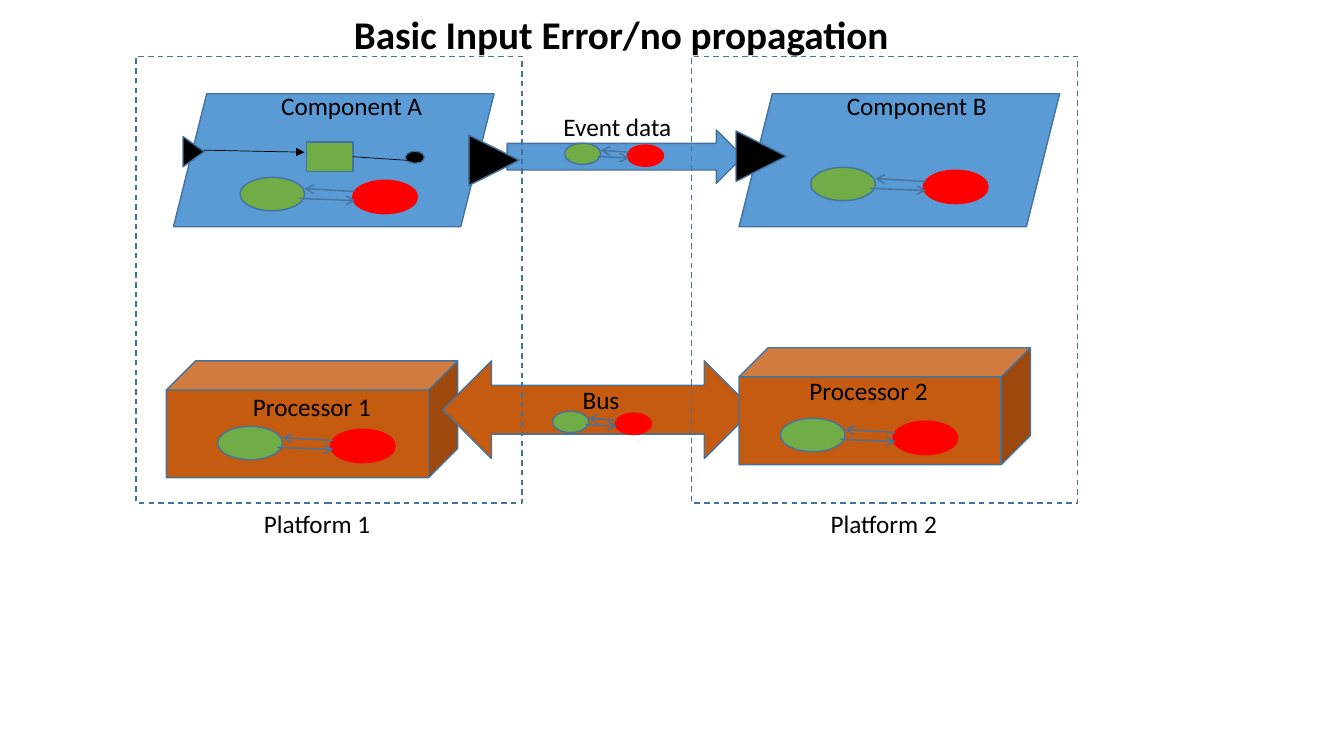
from typing import NamedTuple

from lxml import etree
from pptx import Presentation
from pptx.dml.color import RGBColor
from pptx.enum.dml import MSO_LINE_DASH_STYLE as Dash
from pptx.enum.shapes import MSO_CONNECTOR as Connector, MSO_SHAPE as Preset
from pptx.enum.text import MSO_ANCHOR as Anchor, MSO_AUTO_SIZE as AutoSize, PP_ALIGN as Align
from pptx.oxml.ns import qn
from pptx.util import Inches, Pt

BLACK, RED, GREEN = "000000", "FF0000", "70AD47"
BLUE, ORANGE, OUTLINE = "5B9BD5", "C55A11", "43739E"


class Box(NamedTuple):
    """A rectangle in inches."""
    left: float
    top: float
    width: float
    height: float

    def inner(self, dx, dy, width, height):
        """Return a box offset from this one's top left corner."""
        return Box(self.left + dx, self.top + dy, width, height)

    def point(self, x, y):
        """Return the point at the given fractions of the box."""
        return self.left + x * self.width, self.top + y * self.height

    def lengths(self):
        """Return the four values as lengths."""
        return [Inches(value) for value in self]


def color(value):
    """Turn a hex string into a colour."""
    return RGBColor.from_string(value)


def write(frame, text, size=18, bold=False, wrap=True):
    """Fill a text frame with one formatted, left-aligned line."""
    frame.word_wrap = wrap
    frame.auto_size = AutoSize.SHAPE_TO_FIT_TEXT
    frame.vertical_anchor = Anchor.TOP
    paragraph = frame.paragraphs[0]
    paragraph.alignment = Align.LEFT
    run = paragraph.add_run()
    run.text = text
    run.font.name = "Calibri"
    run.font.size = Pt(size)
    run.font.bold = bold
    run.font.color.rgb = color(BLACK)


def add_label(shapes, text, box, **text_format):
    """Add a text box."""
    write(shapes.add_textbox(*box.lengths()).text_frame, text, **text_format)


def add_preset(shapes, preset, box, fill=None, line=OUTLINE, rotation=0):
    """Add an outlined preset shape."""
    shape = shapes.add_shape(preset, *box.lengths())
    shape.shadow.inherit = False
    shape.rotation = rotation
    if fill:
        shape.fill.solid()
        shape.fill.fore_color.rgb = color(fill)
    else:
        shape.fill.background()
    shape.line.color.rgb = color(line)
    shape.line.width = Pt(1)
    return shape


def add_line(shapes, start, end, line=BLACK, width=0.5, head=None):
    """Add a straight line with an optional arrowhead at its end."""
    ends = [Inches(value) for value in (*start, *end)]
    connector = shapes.add_connector(Connector.STRAIGHT, *ends)
    connector.line.color.rgb = color(line)
    connector.line.width = Pt(width)
    properties = connector.element.spPr
    if head:
        etree.SubElement(properties.find(qn("a:ln")), qn("a:tailEnd"), type=head)
    etree.SubElement(properties, qn("a:effectLst"))
    return connector


def add_error_states(shapes, box):
    """Add the green and red states with the transitions between them."""
    group = shapes.add_group_shape().shapes
    width, height = 0.365 * box.width, 0.92 * box.height
    add_preset(group, Preset.OVAL,
               box.inner(box.width - width, box.height - height, width, height), RED, RED)
    add_preset(group, Preset.OVAL, box.inner(0, 0, width, height), GREEN)
    for start, end in (((0.65, 0.39), (0.365, 0.31)), ((0.335, 0.58), (0.65, 0.64))):
        add_line(group, box.point(*start), box.point(*end), OUTLINE, 1, "arrow")


def add_large_states(shapes, box, dx, dy):
    """Add the error states of a component or processor."""
    add_error_states(shapes, box.inner(dx, dy, 1.76, 0.36))


def add_small_states(shapes, box, dx, dy):
    """Add the error states of a link."""
    add_error_states(shapes, box.inner(dx, dy, 0.98, 0.23))


def add_platform(shapes, box, name, label_dx):
    """Add a dashed platform frame with its name below."""
    add_preset(shapes, Preset.RECTANGLE, box).line.dash_style = Dash.DASH
    add_label(shapes, name, box.inner(label_dx, box.height, 1.27, 0.4), wrap=False)


def add_component(shapes, box, name, states):
    """Add a software component."""
    add_preset(shapes, Preset.PARALLELOGRAM, box, BLUE)
    add_label(shapes, name, box.inner(0.97, -0.08, 1.62, 0.4), wrap=False)
    add_large_states(shapes, box, *states)


def add_input_flow(shapes, box):
    """Add the path from the input port to the error sink of a component."""
    source = add_preset(shapes, Preset.RECTANGLE, box.inner(1.32, 0.48, 0.46, 0.29), GREEN)
    add_preset(shapes, Preset.OVAL, box.inner(2.3, 0.57, 0.19, 0.12), BLACK)
    add_preset(shapes, Preset.ISOSCELES_TRIANGLE, box.inner(0.05, 0.47, 0.3, 0.21),
               BLACK, rotation=90)
    entry, middle, sink = [box.inner(dx, dy, 0, 0)[:2]
                           for dx, dy in ((0.3, 0.56), (1.78, 0.62), (2.46, 0.67))]
    add_line(shapes, sink, middle).end_connect(source, 3)
    add_line(shapes, entry, box.inner(1.3, 0.58, 0, 0)[:2], head="triangle")


def add_event_link(shapes, box):
    """Add the event connection between the two component ports."""
    add_preset(shapes, Preset.RIGHT_ARROW, box, BLUE)
    for dx, dy in ((-0.38, 0.05), (2.27, 0.01)):
        add_preset(shapes, Preset.ISOSCELES_TRIANGLE, box.inner(dx, dy, 0.5, 0.5),
                   BLACK, rotation=90)
    add_label(shapes, "Event data", box.inner(0.46, -0.23, 1.38, 0.4))
    add_small_states(shapes, box, 0.57, 0.13)


def add_processor(shapes, box, name, label, states):
    """Add a processor block."""
    add_preset(shapes, Preset.CUBE, box, ORANGE)
    add_label(shapes, name, box.inner(*label, 1.98, 0.4))
    add_large_states(shapes, box, *states)


def add_bus(shapes, box):
    """Add the bus between the processors."""
    add_preset(shapes, Preset.LEFT_RIGHT_ARROW, box, ORANGE)
    add_label(shapes, "Bus", box.inner(1.29, 0.18, 0.67, 0.4))
    add_small_states(shapes, box, 1.09, 0.5)


def add_title(slide, box):
    """Place and fill the title."""
    title = slide.shapes.title
    title.left, title.top, title.width, title.height = box.lengths()
    write(title.text_frame, "Basic Input Error/no propagation", size=28, bold=True)


def main():
    """Build and save the slide."""
    presentation = Presentation()
    presentation.slide_width, presentation.slide_height = Inches(13.33), Inches(7.5)
    slide = presentation.slides.add_slide(presentation.slide_layouts[5])
    shapes = slide.shapes
    add_title(slide, Box(3.41, 0.05, 5.57, 0.57))
    component_a = Box(1.72, 0.93, 3.18, 1.32)
    add_component(shapes, component_a, "Component A", (0.66, 0.83))
    add_component(shapes, Box(7.33, 0.93, 3.18, 1.32), "Component B", (0.71, 0.73))
    add_event_link(shapes, Box(5.03, 1.29, 2.34, 0.53))
    add_input_flow(shapes, component_a)
    add_processor(shapes, Box(1.65, 3.58, 2.89, 1.16), "Processor 1", (0.76, 0.25), (0.51, 0.65))
    add_bus(shapes, Box(4.39, 3.58, 3.08, 0.97))
    add_processor(shapes, Box(7.33, 3.45, 2.89, 1.16), "Processor 2", (0.6, 0.22), (0.41, 0.7))
    add_platform(shapes, Box(1.35, 0.56, 3.83, 4.43), "Platform 1", 1.17)
    add_platform(shapes, Box(6.86, 0.56, 3.83, 4.43), "Platform 2", 1.28)
    presentation.save("out.pptx")


if __name__ == "__main__":
    main()
